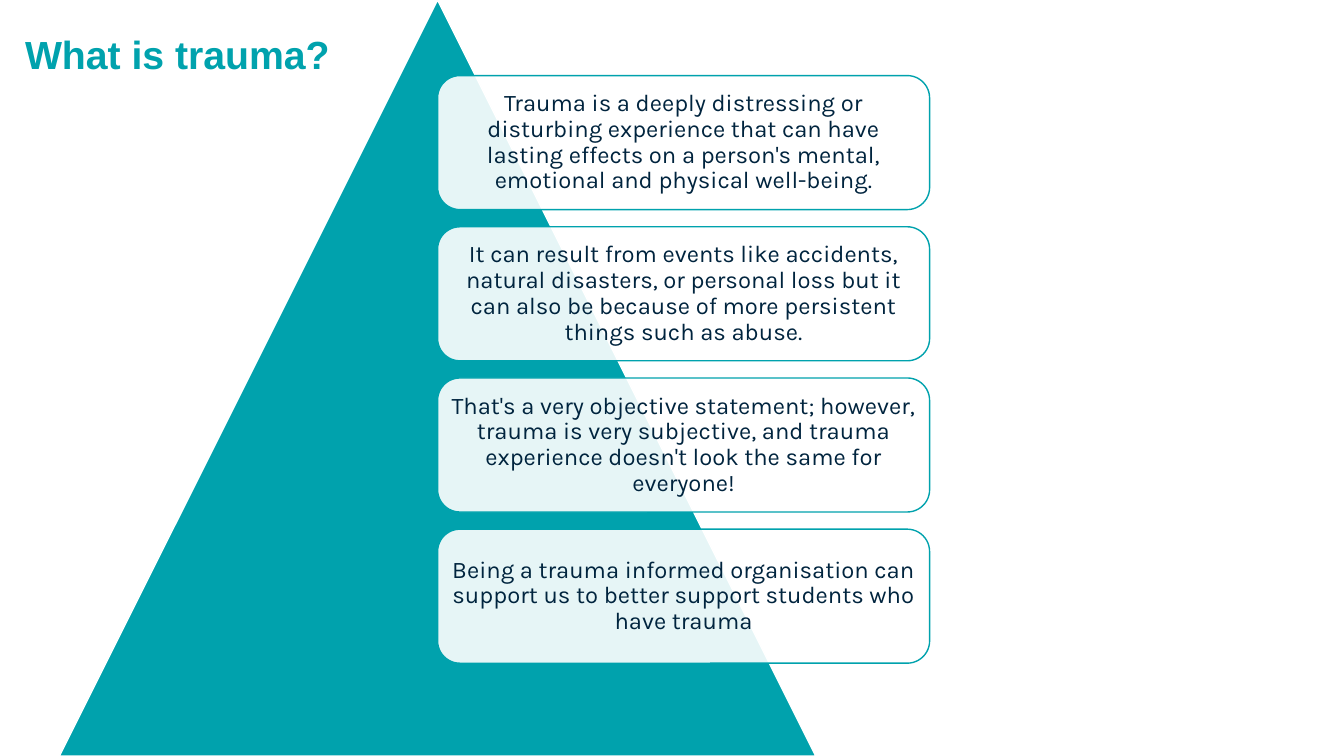
from lxml.etree import SubElement
from pptx import Presentation
from pptx.dml.color import RGBColor
from pptx.enum.shapes import MSO_SHAPE as SHAPE
from pptx.enum.text import MSO_ANCHOR as ANCHOR, PP_ALIGN as ALIGN
from pptx.oxml.ns import qn
from pptx.util import Inches, Pt

COLORS = {"teal": "00A2AD", "navy": "00243E", "white": "FFFFFF"}

CARDS = [
    "Trauma is a deeply distressing or disturbing experience that can have "
    "lasting effects on a person's mental, emotional and physical well-being.",
    "It can result from events like accidents, natural disasters, or personal "
    "loss but it can also be because of more persistent things such as abuse.",
    "That's a very objective statement; however, trauma is very subjective, "
    "and trauma experience doesn't look the same for everyone!",
    "Being a trauma informed organisation can support us to better support "
    "students who have trauma",
]
CARD_TOP, CARD_STEP = 0.75, 1.5


def rgb(name):
    return RGBColor.from_string(COLORS[name])


def write(tf, text, font="Karla", size=17, color="navy", bold=False,
          align=ALIGN.CENTER):
    tf.word_wrap = True
    tf.vertical_anchor = ANCHOR.MIDDLE
    p = tf.paragraphs[0]
    p.alignment = align
    p.line_spacing = 0.9
    p.space_after = Pt(6)
    r = p.add_run()
    r.text = text
    r.font.name = font
    r.font.size = Pt(size)
    r.font.bold = bold
    r.font.color.rgb = rgb(color)


class TraumaSlide:
    def __init__(self, prs):
        self.s = prs.slides.add_slide(prs.slide_layouts[6])

    def title(self, text, *box):
        sp = self.s.shapes.add_textbox(*map(Inches, box))
        write(sp.text_frame, text, font="Arial", size=28, color="teal",
              bold=True, align=ALIGN.LEFT)

    def shape(self, kind, box, fill, line, opacity=None):
        sp = self.s.shapes.add_shape(kind, *map(Inches, box))
        sp.shadow.inherit = False
        sp.fill.solid()
        sp.fill.fore_color.rgb = rgb(fill)
        sp.line.color.rgb = rgb(line)
        sp.line.width = Pt(1)
        if opacity is not None:
            clr = sp.fill._xPr.find(qn("a:solidFill"))[0]
            SubElement(clr, qn("a:alpha"), val=str(opacity * 1000))
        return sp

    def card(self, text, *box):
        sp = self.shape(SHAPE.ROUNDED_RECTANGLE, box, "white", "teal", 90)
        tf = sp.text_frame
        tf.margin_left = tf.margin_right = Inches(0.07)
        tf.margin_top = tf.margin_bottom = Inches(0.07)
        write(tf, text)


def main():
    prs = Presentation()
    prs.slide_width, prs.slide_height = Inches(13.33), Inches(7.5)
    slide = TraumaSlide(prs)

    # Title
    slide.title("What is trauma?", 0.15, 0, 10.82, 1.13)

    # Pyramid
    slide.shape(SHAPE.ISOSCELES_TRIANGLE, (0.59, 0, 7.5, 7.5), "teal", "white")

    # Cards stacked over the pyramid
    for i, text in enumerate(CARDS):
        slide.card(text, 4.34, CARD_TOP + i * CARD_STEP, 4.88, 1.33)

    prs.save("out.pptx")


if __name__ == "__main__":
    main()
